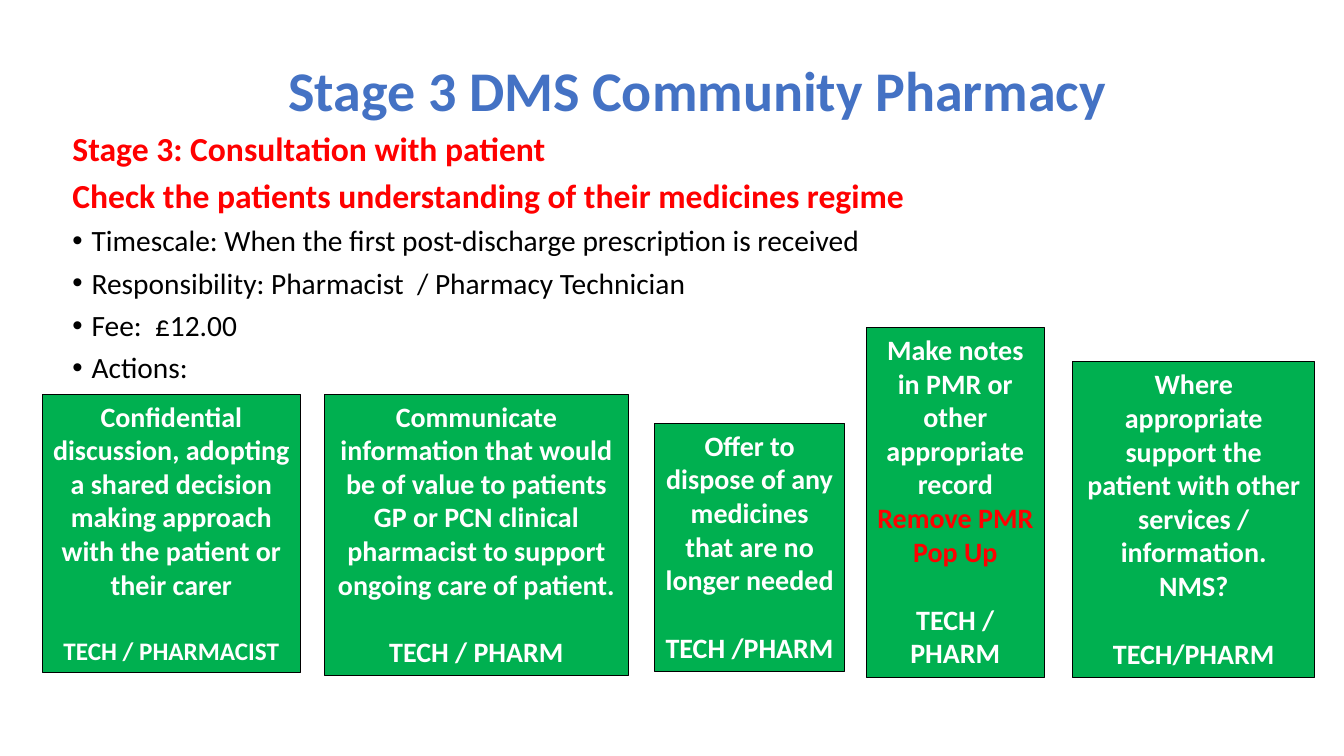
from lxml import etree
from pptx import Presentation
from pptx import util as u
from pptx.dml.color import RGBColor
from pptx.enum import shapes, text
from pptx.oxml.ns import qn

BLUE, RED, GREEN, BLACK, WHITE = "4472C4", "FF0000", "00B050", "000000", "FFFFFF"


def color(hex_code):
    return RGBColor.from_string(hex_code)


def style(font, size, hex_code, bold=True):
    font.name, font.size, font.bold = "Calibri", u.Pt(size), bold
    font.color.rgb = color(hex_code)


deck = Presentation()
deck.slide_width, deck.slide_height = u.Inches(13.33), u.Inches(7.5)
slide = deck.slides.add_slide(deck.slide_layouts[6])

# Heading
heading = slide.shapes.add_textbox(*map(u.Inches, (1.69, 0.2, 10.45, 1.45))).text_frame
heading.word_wrap = True
heading.vertical_anchor = text.MSO_ANCHOR.MIDDLE
title = heading.paragraphs[0]
title.text = "Stage 3 DMS Community Pharmacy"
title.alignment = text.PP_ALIGN.CENTER
title.line_spacing = 0.9
style(title.font, 40, BLUE)

# Stage summary: two red lead lines, then bullets
lead_lines = [
    "Stage 3: Consultation with patient",
    "Check the patients understanding of their medicines regime",
]
bullets = [
    "Timescale: When the first post-discharge prescription is received",
    "Responsibility: Pharmacist  / Pharmacy Technician",
    "Fee:  £12.00",
    "Actions:",
]
summary = slide.shapes.add_textbox(*map(u.Inches, (0.62, 1.27, 11.71, 5))).text_frame
summary.word_wrap = True
for row, line in enumerate(lead_lines + bullets):
    paragraph = summary.add_paragraph() if row else summary.paragraphs[0]
    paragraph.text = line
    paragraph.line_spacing = 0.9
    if row:
        paragraph.space_before = u.Pt(7.5)
    if line in bullets:
        properties = paragraph._p.get_or_add_pPr()
        properties.set("marL", str(u.Inches(0.19)))
        properties.set("indent", str(-u.Inches(0.19)))
        etree.SubElement(properties, qn("a:buFont")).set("typeface", "Arial")
        etree.SubElement(properties, qn("a:buChar")).set("char", "•")
        style(paragraph.font, 21, BLACK, bold=False)
    else:
        style(paragraph.font, 24, RED)

# Action boxes: (left, top, width, height), action paragraphs, red reminder, staff, staff size
actions = [
    ((0.42, 3.91, 2.56, 2.76),
     ["Confidential discussion, adopting a shared decision making approach "
      "with the patient or their carer"], "", "TECH / PHARMACIST", 18),
    ((3.22, 3.91, 3.01, 2.79),
     ["Communicate information that would be of value to patients GP or PCN "
      "clinical pharmacist to support ongoing care of patient."], "", "TECH / PHARM", 20),
    ((6.49, 4.2, 1.89, 2.46),
     ["Offer to dispose of any medicines that are no longer needed"],
     "", "TECH /PHARM", 20),
    ((8.59, 3.25, 1.77, 3.47),
     ["Make notes in PMR or other appropriate record "],
     "Remove PMR Pop Up", "TECH / PHARM", 20),
    ((10.64, 3.59, 2.4, 3.13),
     ["Where appropriate support the patient with other services / information.",
      "NMS?"], "", "TECH/PHARM", 20),
]
for place, steps, reminder, staff, staff_size in actions:
    box = slide.shapes.add_shape(shapes.MSO_SHAPE.RECTANGLE, *map(u.Inches, place))
    box.shadow.inherit = False
    box.fill.solid()
    box.fill.fore_color.rgb = color(GREEN)
    box.line.color.rgb = color(BLACK)
    box.line.width = u.Pt(0.75)
    frame = box.text_frame
    frame.word_wrap = True
    frame.vertical_anchor = text.MSO_ANCHOR.TOP
    frame.text = "\n".join(steps + [staff])
    for paragraph in frame.paragraphs:
        paragraph.alignment = text.PP_ALIGN.CENTER
        style(paragraph.font, 20, WHITE)
    staff_line = frame.paragraphs[-1]
    staff_line.space_before = u.Pt(24.4)
    staff_line.font.size = u.Pt(staff_size)
    if reminder:
        reminder_run = frame.paragraphs[0].add_run()
        reminder_run.text = reminder
        reminder_run.font.color.rgb = color(RED)

deck.save("out.pptx")
